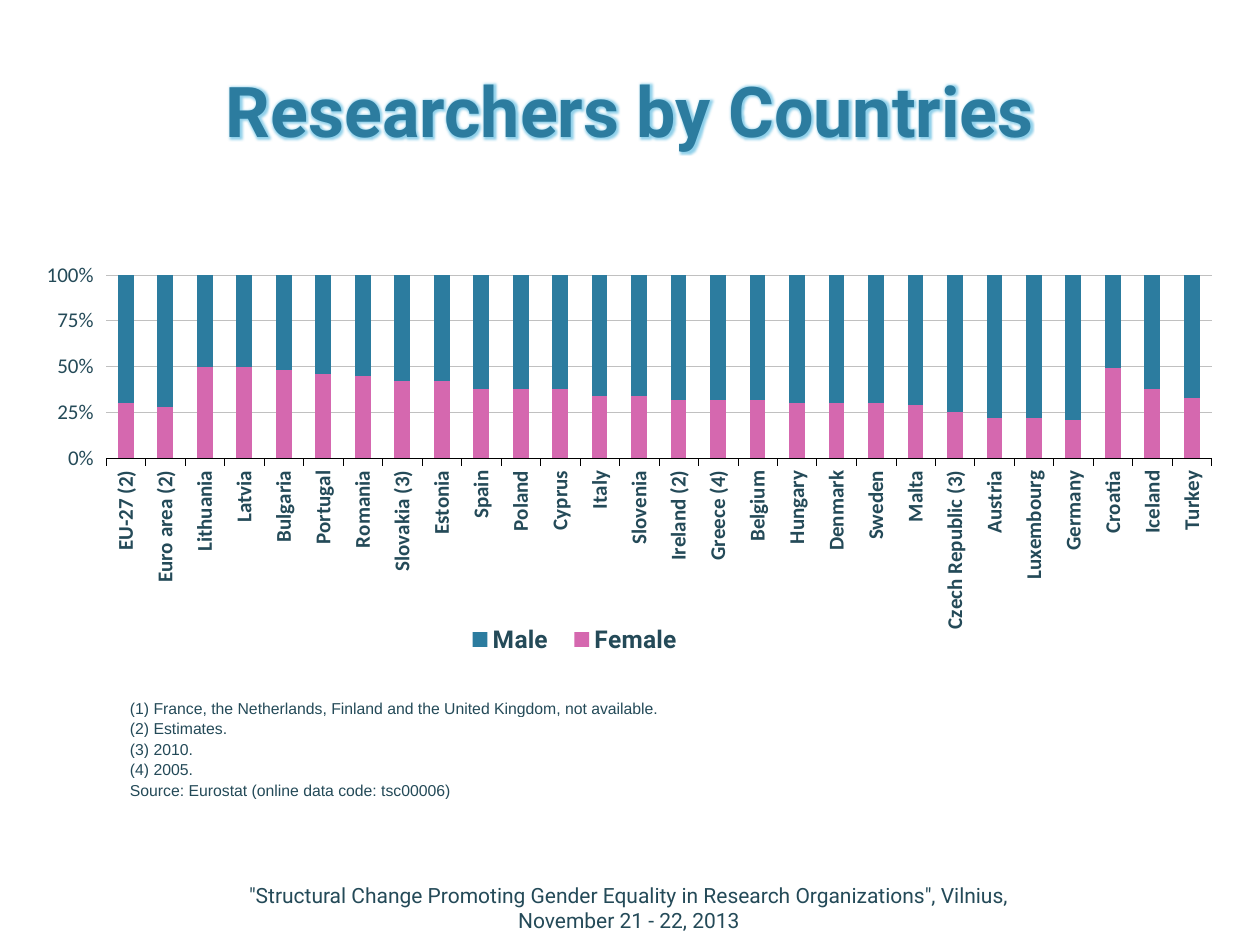
"""Build the slide on the share of female and male researchers by country."""
from typing import Any, NamedTuple

from lxml import etree
from pptx import Presentation
from pptx.chart.data import CategoryChartData
from pptx.dml.color import RGBColor
from pptx.enum.chart import XL_CHART_TYPE, XL_LEGEND_POSITION, XL_TICK_LABEL_POSITION, XL_TICK_MARK
from pptx.enum.text import MSO_ANCHOR, PP_ALIGN
from pptx.oxml import parse_xml
from pptx.oxml.ns import nsdecls, qn
from pptx.util import Cm, Pt

STACKED = XL_CHART_TYPE.COLUMN_STACKED_100
RIGHT = XL_LEGEND_POSITION.RIGHT
LOW = XL_TICK_LABEL_POSITION.LOW
OUTSIDE = XL_TICK_MARK.OUTSIDE
MIDDLE, BOTTOM = MSO_ANCHOR.MIDDLE, MSO_ANCHOR.BOTTOM
CENTER = PP_ALIGN.CENTER

BLUE, PINK, INK, GRID, BLACK, GLOW = "2C7C9F", "D568AF", "244A58", "C0C0C0", "000000", "8FD0EA"


class Country(NamedTuple):
    name: str
    female: int


class Box(NamedTuple):
    left: float
    top: float
    width: float
    height: float

    def lengths(self) -> list[int]:
        return [Cm(value) for value in self]


COUNTRIES = [
    Country("EU-27 (2)", 30), Country("Euro area (2)", 28), Country("Lithuania", 50),
    Country("Latvia", 50), Country("Bulgaria", 48), Country("Portugal", 46),
    Country("Romania", 45), Country("Slovakia (3)", 42), Country("Estonia", 42),
    Country("Spain", 38), Country("Poland", 38), Country("Cyprus", 38),
    Country("Italy", 34), Country("Slovenia", 34), Country("Ireland (2)", 32),
    Country("Greece (4)", 32), Country("Belgium", 32), Country("Hungary", 30),
    Country("Denmark", 30), Country("Sweden", 30), Country("Malta", 29),
    Country("Czech Republic (3)", 25), Country("Austria", 22), Country("Luxembourg", 22),
    Country("Germany", 21), Country("Croatia", 49), Country("Iceland", 38),
    Country("Turkey", 33),
]
NOTES = [
    "(1) France, the Netherlands, Finland and the United Kingdom, not available.",
    "(2) Estimates.",
    "(3) 2010.",
    "(4) 2005.",
    "Source: Eurostat (online data code: tsc00006)",
]
CONFERENCE = ('"Structural Change Promoting Gender Equality in Research Organizations", '
              "Vilnius, November 21 - 22, 2013")


def rgb(color: str) -> RGBColor:
    return RGBColor.from_string(color)


def assign(target: Any, values: dict[str, Any]) -> None:
    for name, value in values.items():
        setattr(target, name, value)


def style_font(font: Any, name: str, size: float, color: str, bold: bool = False) -> None:
    assign(font, {"name": name, "size": Pt(size), "bold": bold})
    font.color.rgb = rgb(color)


def style_line(line: Any, color: str) -> None:
    line.color.rgb = rgb(color)
    line.width = Pt(0.25)


def place(parent: Any, index: int, box: Box, inner: bool = False) -> None:
    """Give a chart part a fixed place, in fractions of the chart."""
    for old in parent.findall(qn("c:layout")):
        parent.remove(old)
    layout = parse_xml(f"<c:layout {nsdecls('c')}><c:manualLayout/></c:layout>")
    settings = {"layoutTarget": "inner"} if inner else {}
    settings |= {"xMode": "edge", "yMode": "edge"}
    settings |= dict(zip("xywh", box))
    for tag, value in settings.items():
        etree.SubElement(layout[0], qn(f"c:{tag}")).set("val", str(value))
    parent.insert(index, layout)


def add_title(slide: Any) -> None:
    title = slide.shapes.title
    assign(title, dict(zip(("left", "top", "width", "height"), Box(1.52, 0.74, 22.35, 2.44).lengths())))
    frame = title.text_frame
    assign(frame, {"text": "Researchers by Countries", "vertical_anchor": BOTTOM, "word_wrap": True})
    paragraph = frame.paragraphs[0]
    paragraph.alignment = CENTER
    run = paragraph.runs[0]
    style_font(run.font, "Roboto", 40, BLUE, True)
    glow = parse_xml(f'<a:effectLst {nsdecls("a")}><a:glow rad="50800">'
                     f'<a:srgbClr val="{GLOW}"/></a:glow></a:effectLst>')
    run._r.rPr.find(qn("a:latin")).addprevious(glow)


def add_conference(slide: Any) -> None:
    frame = slide.shapes.add_textbox(*Box(4.45, 17.78, 16.46, 1.02).lengths()).text_frame
    assign(frame, {"text": CONFERENCE, "word_wrap": True, "vertical_anchor": MIDDLE})
    frame.paragraphs[0].alignment = CENTER
    style_font(frame.paragraphs[0].runs[0].font, "Roboto", 12, INK)


def add_researcher_chart(slide: Any) -> None:
    data = CategoryChartData()
    data.categories = [country.name for country in COUNTRIES]
    data.add_series("Female", [country.female for country in COUNTRIES])
    data.add_series("Male", [100 - country.female for country in COUNTRIES])
    chart = slide.shapes.add_chart(STACKED, *Box(0.2, 4.8, 24.23, 9.25).lengths(), data).chart
    assign(chart, {"has_title": False, "has_legend": True})
    style_font(chart.font, "Roboto", 12, BLACK, True)

    bars = chart.plots[0]
    assign(bars, {"gap_width": 150, "overlap": 100, "vary_by_categories": False})
    for series, color in zip(bars.series, (PINK, BLUE)):
        series.format.fill.solid()
        series.format.fill.fore_color.rgb = rgb(color)

    countries, share = chart.category_axis, chart.value_axis
    assign(countries, {"tick_label_position": LOW, "major_tick_mark": OUTSIDE})
    style_font(countries.tick_labels.font, "Calibri", 12, INK, True)
    style_line(countries.format.line, BLACK)
    countries._element.find(qn("c:txPr")).find(qn("a:bodyPr")).set("rot", "-5400000")

    assign(share, {"minimum_scale": 0, "maximum_scale": 1, "major_unit": 0.25,
                   "major_tick_mark": OUTSIDE, "has_major_gridlines": True})
    assign(share.tick_labels, {"number_format": "0%", "number_format_is_linked": False})
    style_font(share.tick_labels.font, "Calibri", 12, INK)
    share.format.line.fill.background()
    style_line(share.major_gridlines.format.line, GRID)

    legend = chart.legend
    assign(legend, {"position": RIGHT, "include_in_layout": False})
    style_font(legend.font, "Roboto", 14, INK, True)
    place(legend._element, 1, Box(0.37, 0.84, 0.2, 0.07))
    place(bars._element.getparent(), 0, Box(0.08, 0.08, 0.92, 0.4), inner=True)


def add_notes_table(slide: Any) -> None:
    table = slide.shapes.add_table(len(NOTES), 1, *Box(2.59, 14.05, 11.73, 1.8).lengths()).table
    assign(table, {"first_row": False, "horz_banding": False})
    for row, note in zip(table.rows, NOTES):
        cell = row.cells[0]
        assign(cell, {"text": note, "vertical_anchor": BOTTOM, "margin_left": Cm(0.03),
                      "margin_right": Cm(0.03), "margin_top": Cm(0.03), "margin_bottom": 0})
        cell.fill.background()
        style_font(cell.text_frame.paragraphs[0].runs[0].font, "Arial", 9, INK)


def main() -> None:
    deck = Presentation()
    assign(deck, {"slide_width": Cm(25.4), "slide_height": Cm(19.05)})
    slide = deck.slides.add_slide(deck.slide_layouts[5])
    for add in (add_title, add_conference, add_researcher_chart, add_notes_table):
        add(slide)
    deck.save("out.pptx")


if __name__ == "__main__":
    main()
